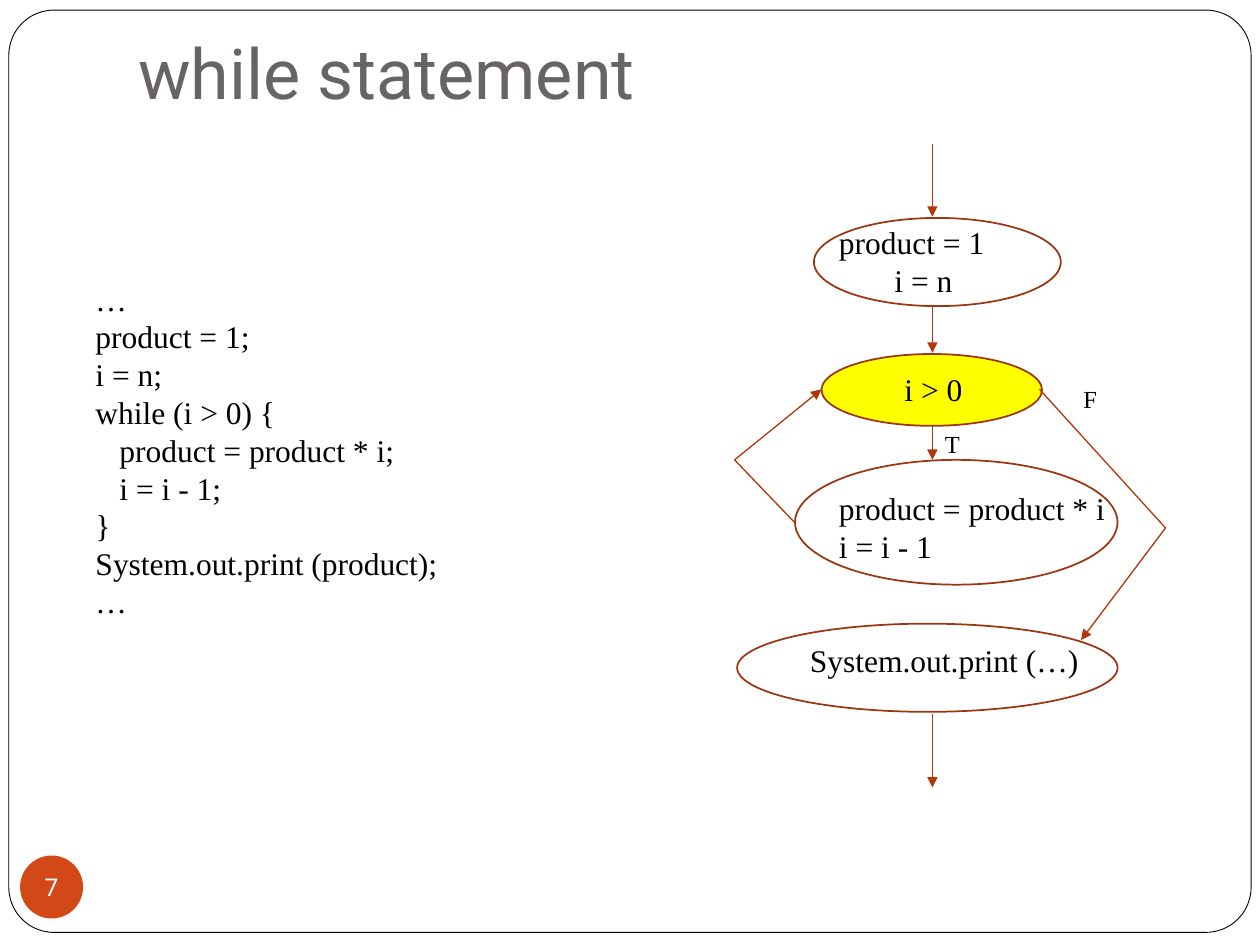
from dataclasses import dataclass

from lxml import etree
from pptx import Presentation
from pptx.dml.color import RGBColor
from pptx.enum.shapes import MSO_CONNECTOR, MSO_SHAPE
from pptx.enum.text import MSO_ANCHOR, PP_ALIGN
from pptx.oxml.ns import qn
from pptx.util import Inches, Pt

STRAIGHT = MSO_CONNECTOR.STRAIGHT
OVAL, ROUNDED = MSO_SHAPE.OVAL, MSO_SHAPE.ROUNDED_RECTANGLE
TOP, MIDDLE, BOTTOM = MSO_ANCHOR.TOP, MSO_ANCHOR.MIDDLE, MSO_ANCHOR.BOTTOM
LEFT, CENTER = PP_ALIGN.LEFT, PP_ALIGN.CENTER


@dataclass(frozen=True)
class Theme:
    sans: str = "Roboto"
    serif: str = "Times New Roman"
    black: str = "000000"
    white: str = "FFFFFF"
    title: str = "696464"
    badge: str = "D34817"
    highlight: str = "FFFF00"
    outline: str = "9C3511"
    arrow: str = "B1360B"
    title_size: int = 40
    body_size: int = 18
    label_size: int = 14
    frame_width: float = 0.5
    outline_width: float = 1
    arrow_width: float = 0.75


class Deck:
    def __init__(self, theme, slide):
        self.theme = theme
        self.s = slide

    def shape(self, kind, box, fill=None, line=None, width=1):
        sp = self.s.shapes.add_shape(kind, *map(Inches, box))
        sp.shadow.inherit = False
        if fill:
            sp.fill.solid()
            sp.fill.fore_color.rgb = RGBColor.from_string(fill)
        else:
            sp.fill.background()
        if line:
            sp.line.color.rgb = RGBColor.from_string(line)
            sp.line.width = Pt(width)
        else:
            sp.line.fill.background()
        return sp

    def frame(self, box, radius):
        t = self.theme
        sp = self.shape(ROUNDED, box, t.white, t.black, t.frame_width)
        sp.adjustments[0] = radius

    def node(self, box, fill=None):
        self.shape(OVAL, box, fill, self.theme.outline, self.theme.outline_width)

    def add_lines(self, tf, lines, size, font, color, align=LEFT):
        for i, (text, indent) in enumerate(lines):
            p = tf.paragraphs[0] if i == 0 else tf.add_paragraph()
            p.alignment = align
            if indent:
                p._p.get_or_add_pPr().set("marL", str(Inches(indent)))
            r = p.add_run()
            r.text = text
            r.font.size = Pt(size)
            r.font.name = font
            r.font.color.rgb = RGBColor.from_string(color)

    def text_frame(self, box, anchor):
        tf = self.s.shapes.add_textbox(*map(Inches, box)).text_frame
        tf.word_wrap = True
        tf.vertical_anchor = anchor
        return tf

    def text(self, box, lines, size=None):
        t = self.theme
        tf = self.text_frame(box, TOP)
        self.add_lines(tf, lines, size or t.body_size, t.serif, t.black)

    def title(self, box, text):
        t = self.theme
        tf = self.text_frame(box, BOTTOM)
        tf.margin_bottom = Inches(0.1)
        self.add_lines(tf, [(text, 0)], t.title_size, t.sans, t.title)

    def badge(self, box, text):
        t = self.theme
        tf = self.shape(OVAL, box, t.badge).text_frame
        tf.margin_left = tf.margin_right = tf.margin_top = tf.margin_bottom = 0
        tf.word_wrap = False
        tf.vertical_anchor = MIDDLE
        self.add_lines(tf, [(text, 0)], t.label_size, t.sans, t.white, CENTER)

    def line(self, start, end, head=True):
        c = self.s.shapes.add_connector(STRAIGHT, *map(Inches, start + end))
        c.line.color.rgb = RGBColor.from_string(self.theme.arrow)
        c.line.width = Pt(self.theme.arrow_width)
        spPr = c._element.spPr
        if head:
            etree.SubElement(spPr.find(qn("a:ln")), qn("a:tailEnd"), type="triangle")
        etree.SubElement(spPr, qn("a:effectLst"))


def main():
    prs = Presentation()
    prs.slide_width, prs.slide_height = Inches(10), Inches(7.5)
    theme = Theme()
    d = Deck(theme, prs.slides.add_slide(prs.slide_layouts[6]))

    d.frame((0.07, 0.08, 9.86, 7.32), 0.049)
    d.title((1, 0.3, 8.5, 0.7), "while statement")
    d.badge((0.16, 6.79, 0.5, 0.5), "7")

    code = [
        ("…", 0),
        ("product = 1;", 0),
        ("i = n;", 0),
        ("while (i > 0) {", 0),
        ("product = product * i;", 0.19),
        ("i = i - 1;", 0.19),
        ("}", 0),
        ("System.out.print (product);", 0),
        ("…", 0),
    ]
    d.text((0.66, 2.17, 3.67, 2.83), code)

    steps = [
        ((6.46, 1.73, 1.96, 0.7), None, (6.56, 1.72, 1.58, 0.71),
         [("product = 1", 0), ("i = n", 0.44)]),
        ((6.52, 2.81, 1.75, 0.57), theme.highlight, (7.08, 2.89, 1.17, 0.4),
         [("i > 0", 0)]),
        ((6.31, 3.65, 2.56, 0.99), None, (6.56, 3.83, 2.69, 0.71),
         [("product = product * i", 0), ("i = i - 1", 0)]),
        ((5.85, 4.95, 3.02, 0.7), None, (6.33, 5.04, 2.67, 0.4),
         [("System.out.print (…)", 0)]),
    ]
    for oval, fill, box, lines in steps:
        d.node(oval, fill)
        d.text(box, lines)

    flow_x = 7.4
    for top, bottom in [(1.14, 1.72), (2.43, 2.8), (3.37, 3.65), (5.67, 6.25)]:
        d.line((flow_x, top), (flow_x, bottom))

    loop_back = [(6.31, 4.15), (5.83, 3.65), (6.52, 3.09)]
    loop_exit = [(8.25, 3.09), (9.25, 4.19), (8.58, 5.08)]
    for start, corner, end in (loop_back, loop_exit):
        d.line(start, corner, head=False)
        d.line(corner, end)

    d.text((flow_x, 3.36, 0.42, 0.34), [("T", 0)], theme.label_size)
    d.text((8.5, 3, 0.47, 0.34), [("F", 0)], theme.label_size)

    prs.save("out.pptx")


if __name__ == "__main__":
    main()
